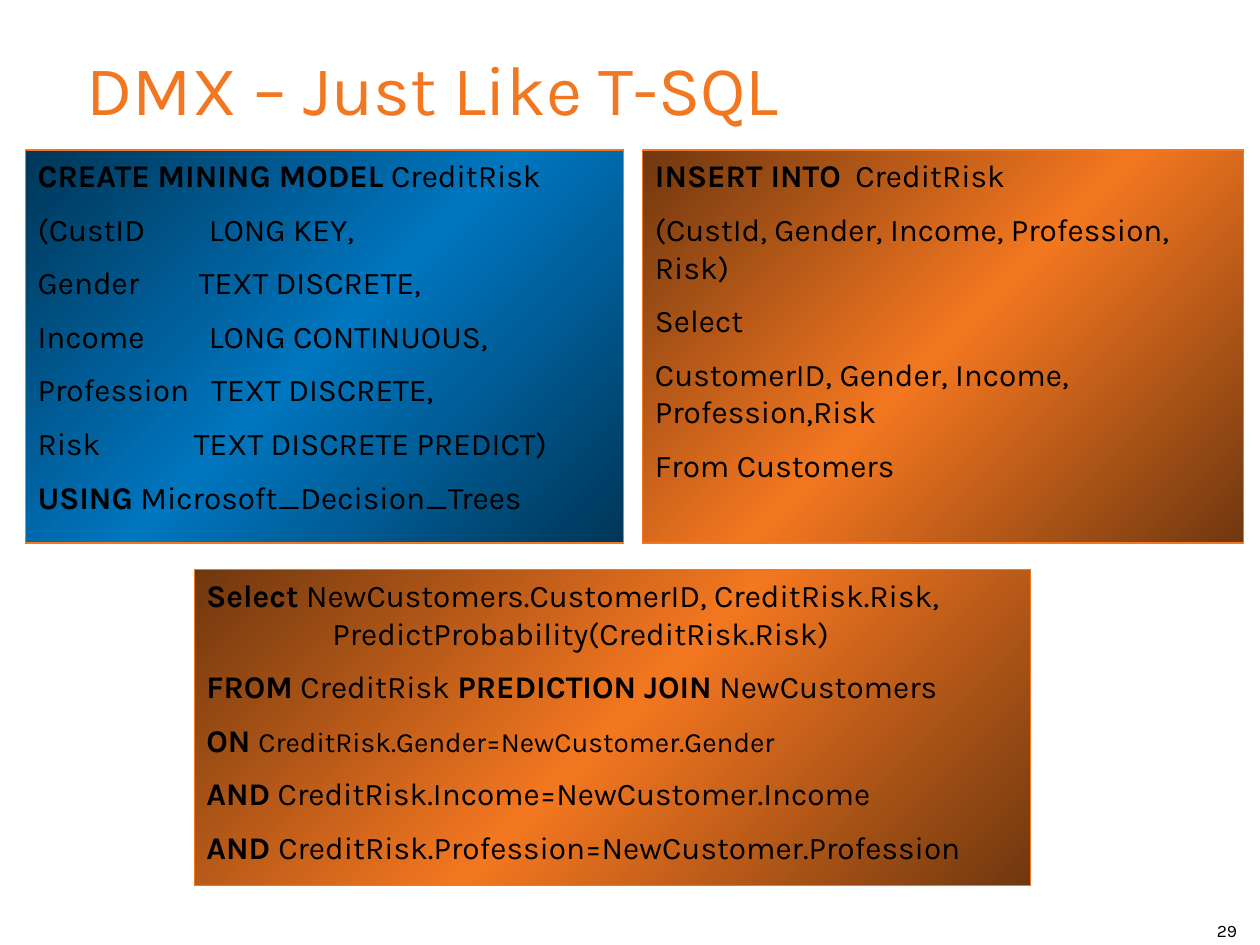
from copy import deepcopy

from pptx import Presentation
from pptx.dml.color import RGBColor
from pptx.enum.shapes import MSO_SHAPE
from pptx.enum.text import MSO_ANCHOR, PP_ALIGN
from pptx.oxml.ns import qn
from pptx.util import Inches, Pt

RECT = MSO_SHAPE.RECTANGLE
TOP = MSO_ANCHOR.TOP
LEFT = PP_ALIGN.LEFT
BLACK = RGBColor(0x00, 0x00, 0x00)
ORANGE = RGBColor(0xF3, 0x77, 0x20)
DARK_ORANGE = RGBColor(0x70, 0x37, 0x0F)
BLUE = RGBColor(0x00, 0x76, 0xBF)
DARK_BLUE = RGBColor(0x00, 0x36, 0x58)


def add_text(p, text, size=18, color=BLACK, bold=False):
    r = p.add_run()
    r.text = text
    r.font.name = "Karla"
    r.font.size = Pt(size)
    r.font.color.rgb = color
    r.font.bold = bold


prs = Presentation()
prs.slide_width = Inches(10)
prs.slide_height = Inches(7.5)
s = prs.slides.add_slide(prs.slide_layouts[6])

labels = [
    ("29", 9.56, 7.25, 0.44, 0.27, 10, BLACK),
    ("DMX – Just Like T-SQL", 0.59, 0.31, 8.8, 1.25, 40, ORANGE),
]
for text, x, y, w, h, size, color in labels:
    tf = s.shapes.add_textbox(Inches(x), Inches(y), Inches(w), Inches(h)).text_frame
    tf.word_wrap = True
    add_text(tf.paragraphs[0], text, size=size, color=color)

create_lines = [
    ("CREATE MINING MODEL", " CreditRisk", 18, None),
    ("", "(CustID\tLONG KEY,", 18, 1.36),
    ("", "Gender\tTEXT DISCRETE,", 18, 1.28),
    ("", "Income\tLONG CONTINUOUS,", 18, 1.36),
    ("", "Profession\tTEXT DISCRETE,", 18, 1.38),
    ("", "Risk\tTEXT DISCRETE PREDICT)", 18, 1.24),
    ("USING", " Microsoft_Decision_Trees", 18, None),
]
insert_lines = [
    ("INSERT INTO", "\tCreditRisk", 18, 1.59),
    ("", "(CustId, Gender, Income, Profession, Risk)", 18, None),
    ("", "Select", 18, None),
    ("", "CustomerID, Gender, Income, Profession,Risk", 18, None),
    ("", "From Customers", 18, None),
]
select_lines = [
    ("Select", " NewCustomers.CustomerID, CreditRisk.Risk,", 18, None),
    ("", "\tPredictProbability(CreditRisk.Risk)", 18, 1),
    ("FROM", " CreditRisk ", 18, None),
    ("ON ", "CreditRisk.Gender=NewCustomer.Gender", 16, None),
    ("AND", " CreditRisk.Income=NewCustomer.Income", 18, None),
    ("AND ", "CreditRisk.Profession=NewCustomer.Profession", 18, None),
]
panels = [
    (0.2, 1.19, 4.75, 3.12, 0.75, DARK_BLUE, BLUE, create_lines),
    (5.1, 1.19, 4.77, 3.12, 0.75, DARK_ORANGE, ORANGE, insert_lines),
    (1.54, 4.52, 6.64, 2.51, 0.5, DARK_ORANGE, ORANGE, select_lines),
]
for x, y, w, h, line_width, edge, middle, lines in panels:
    sp = s.shapes.add_shape(RECT, Inches(x), Inches(y), Inches(w), Inches(h))
    sp.shadow.inherit = False
    sp.line.color.rgb = ORANGE
    sp.line.width = Pt(line_width)
    sp.fill.gradient()
    sp.fill.gradient_angle = 315
    stop_list = sp._element.spPr.find(".//" + qn("a:gsLst"))
    stop_list.insert(1, deepcopy(stop_list[0]))
    for stop, position, color in zip(sp.fill.gradient_stops, (0, 0.5, 1), (edge, middle, edge)):
        stop.position = position
        stop.color.rgb = color

    tf = sp.text_frame
    tf.word_wrap = True
    tf.vertical_anchor = TOP
    for i, (keyword, code, size, tab) in enumerate(lines):
        p = tf.paragraphs[0] if i == 0 else tf.add_paragraph()
        p.alignment = LEFT
        if i and not code.startswith("\t"):
            p.space_before = Pt(9)
        if tab:
            tabs = p._p.get_or_add_pPr().makeelement(qn("a:tabLst"), {})
            stop = tabs.makeelement(qn("a:tab"), {"pos": str(Inches(tab)), "algn": "l"})
            tabs.append(stop)
            p._p.pPr.append(tabs)
        if keyword:
            add_text(p, keyword, bold=True)
        add_text(p, code, size=size)
        if keyword == "FROM":
            add_text(p, "PREDICTION JOIN", bold=True)
            add_text(p, " NewCustomers")

prs.save("out.pptx")
